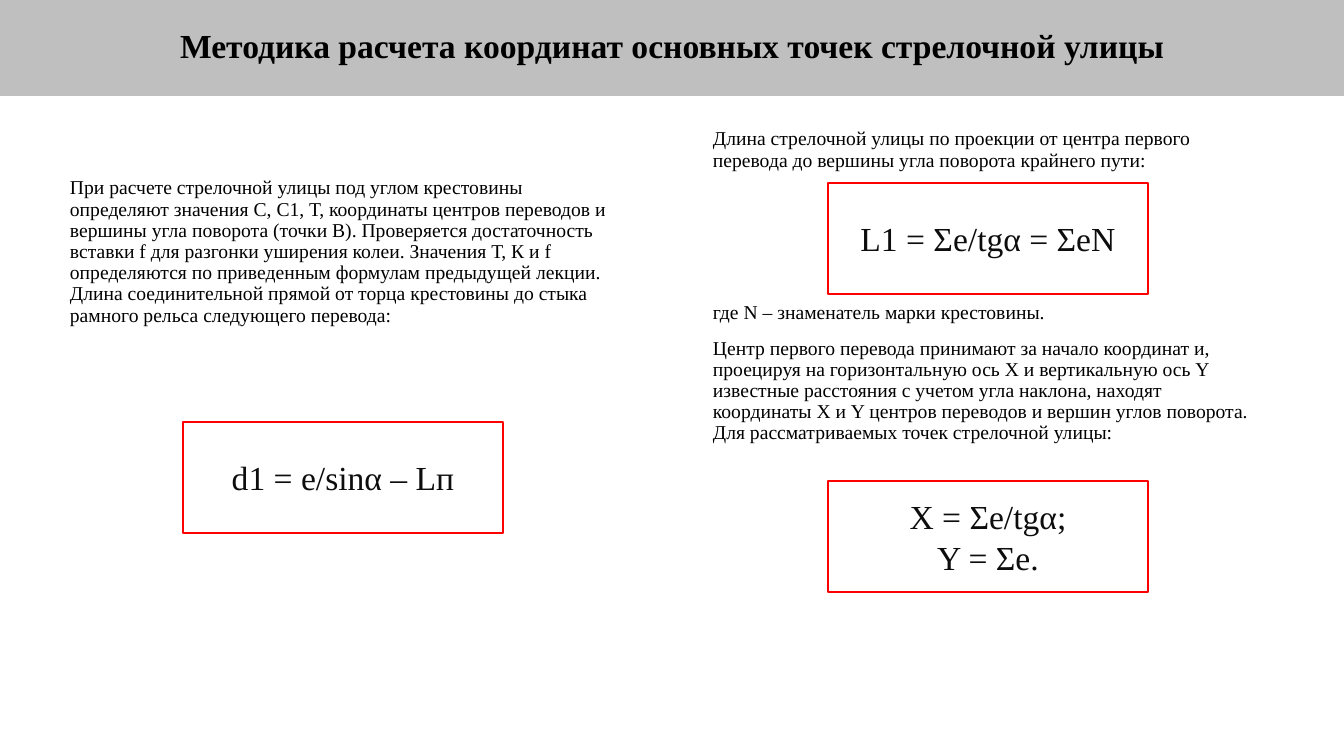
from dataclasses import dataclass

from pptx import Presentation
from pptx.dml.color import RGBColor
from pptx.enum.shapes import MSO_SHAPE
from pptx.enum.text import MSO_ANCHOR, PP_ALIGN
from pptx.util import Pt

RECT = MSO_SHAPE.RECTANGLE
LEFT, CENTER = PP_ALIGN.LEFT, PP_ALIGN.CENTER
TOP, MIDDLE = MSO_ANCHOR.TOP, MSO_ANCHOR.MIDDLE
PX = 914400 / 100.8


@dataclass(frozen=True)
class Theme:
    font: str = "Times New Roman"
    black: str = "000000"
    ink: str = "0D0D0D"
    white: str = "FFFFFF"
    red: str = "FF0000"
    gray: str = "BFBFBF"
    body: int = 14
    large: int = 24


theme = Theme()


def place(*box):
    """Turn px lengths into EMU."""
    return [round(n * PX) for n in box]


def write(shape, *lines, size=theme.body, color=theme.black, bold=False,
          align=LEFT, anchor=TOP, pitch=1.0, gaps=()):
    """Fill the shape with paragraphs; gaps gives the points before each."""
    frame = shape.text_frame
    frame.word_wrap = True
    frame.vertical_anchor = anchor
    frame.text = "\n".join(lines)
    for para in frame.paragraphs:
        para.alignment = align
        para.line_spacing = pitch
        font = para.font
        font.name, font.size, font.bold = theme.font, Pt(size), bold
        font.color.rgb = RGBColor.from_string(color)
    for para, gap in zip(frame.paragraphs, gaps):
        para.space_before = Pt(gap)


deck = Presentation()
deck.slide_width, deck.slide_height = place(1344, 756)
slide = deck.slides.add_slide(deck.slide_layouts[6])
shapes = slide.shapes

# Body columns; the wide gap leaves room for the first formula on the right
columns = [
    ((60, 173, 568, 546), (0,), [
        "При расчете стрелочной улицы под углом крестовины определяют значения "
        "С, С1, Т, координаты центров переводов и вершины угла поворота (точки В). "
        "Проверяется достаточность вставки f для разгонки уширения колеи. "
        "Значения Т, К и f определяются по приведенным формулам предыдущей лекции. "
        "Длина соединительной прямой от торца крестовины до стыка рамного рельса "
        "следующего перевода:",
    ]),
    ((703, 124, 572, 596), (0, 94, 10), [
        "Длина стрелочной улицы по проекции от центра первого перевода до вершины "
        "угла поворота крайнего пути:",
        "где N – знаменатель марки крестовины.",
        "Центр первого перевода принимают за начало координат и, проецируя на "
        "горизонтальную ось X и вертикальную ось Y известные расстояния с учетом "
        "угла наклона, находят координаты X и Y центров переводов и вершин углов "
        "поворота. Для рассматриваемых точек стрелочной улицы:",
    ]),
]
for box, gaps, lines in columns:
    write(shapes.add_textbox(*place(*box)), *lines, pitch=0.9, gaps=gaps)

# Formula boxes
formulas = [
    (183, 422, ["d1 = e/sinα – Lп"]),
    (828, 183, ["L1 = Σе/tgα = ΣеN"]),
    (828, 481, ["X = Σе/tgα;", "Y = Σе."]),
]
for x, y, lines in formulas:
    frame = shapes.add_shape(RECT, *place(x, y, 320, 111))
    frame.shadow.inherit = False
    frame.fill.solid()
    frame.fill.fore_color.rgb = RGBColor.from_string(theme.white)
    frame.line.color.rgb = RGBColor.from_string(theme.red)
    frame.line.width = Pt(1)
    write(frame, *lines, size=theme.large, color=theme.ink,
          align=CENTER, anchor=MIDDLE)

# Title band
band = shapes.add_shape(RECT, *place(0, 0, 1344, 96))
band.shadow.inherit = False
band.fill.solid()
band.fill.fore_color.rgb = RGBColor.from_string(theme.gray)
band.line.fill.background()
write(band, "Методика расчета координат основных точек стрелочной улицы",
      size=theme.large, bold=True, align=CENTER, anchor=MIDDLE, pitch=0.9)

deck.save("out.pptx")
